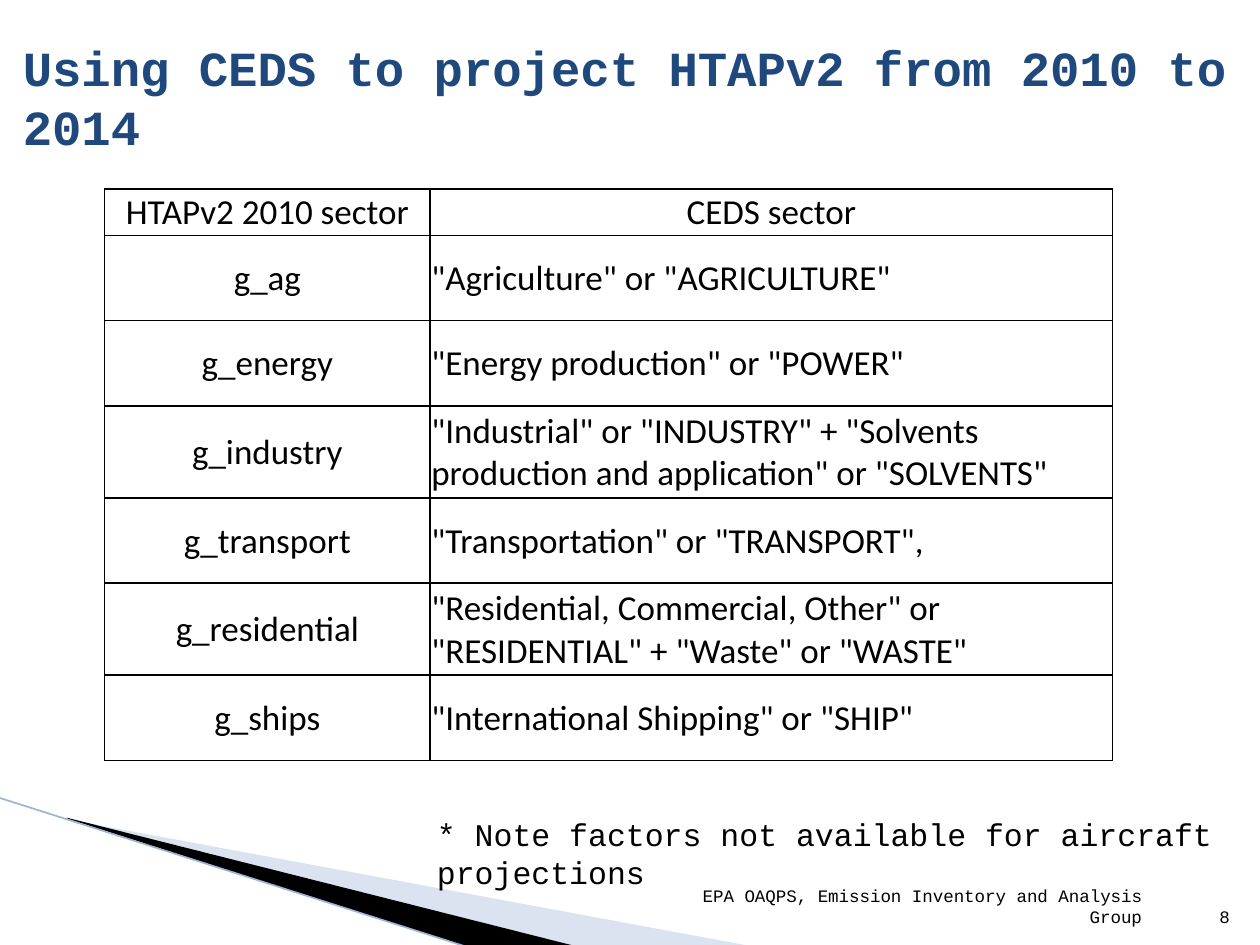
from lxml import etree
from pptx import Presentation
from pptx.dml.color import RGBColor
from pptx.enum import shapes, text
from pptx.oxml.ns import qn
from pptx.util import Pt

HUES = {"ink": "000000", "title": "1F497D", "pale": "A7B9DB", "edge": "9EB3D6"}
MONO, SANS = "Courier New", "Calibri"
LEFT, MID, RIGHT = text.PP_ALIGN.LEFT, text.PP_ALIGN.CENTER, text.PP_ALIGN.RIGHT
TOP, CENTER, BOTTOM = (text.MSO_ANCHOR.TOP, text.MSO_ANCHOR.MIDDLE,
                       text.MSO_ANCHOR.BOTTOM)

TITLE = "Using CEDS to project HTAPv2 from 2010 to 2014"
ROWS = [
    ("HTAPv2 2010 sector", "CEDS sector"),
    ("g_ag", '"Agriculture" or "AGRICULTURE"'),
    ("g_energy", '"Energy production" or "POWER"'),
    ("g_industry", '"Industrial" or "INDUSTRY" + "Solvents production and '
                   'application" or "SOLVENTS"'),
    ("g_transport", '"Transportation" or "TRANSPORT",'),
    ("g_residential", '"Residential, Commercial, Other" or "RESIDENTIAL" + '
                      '"Waste" or "WASTE"'),
    ("g_ships", '"International Shipping" or "SHIP"'),
]
WIDTHS = (186, 390)
HEAD, SHORT, TALL = 26.6, 48.7, 52.6
WRAP = 50  # longer sector text takes two lines

# words, box, size, alignment, anchor
NOTES = [
    ("EPA OAQPS, Emission Inventory and Analysis Group",
     (383.8, 504.7, 275.8, 28.8), 10, RIGHT, BOTTOM),
    ("8", (681, 504.7, 28.8, 28.8), 10, RIGHT, BOTTOM),
    ("* Note factors not available for aircraft projections",
     (242.6, 462.2, 459.4, 28.8), 18, LEFT, TOP),
]
# outline, colour, opacity in percent
WEDGES = [
    ([(39.6, 468.5), (428.4, 540.5), (328.3, 540.5), (39.6, 468)], "pale", 40),
    ([(38.2, 467.3), (329, 540.7), (267.8, 541.4), (38.9, 468)], "ink", 100),
]
EDGE = (-0.7, 455.8, 267.8, 541.4)


def rgb(name):
    return RGBColor.from_string(HUES[name])


def write(frame, words, size, face, align, hue="ink", bold=False):
    frame.word_wrap = True
    para = frame.paragraphs[0]
    para.text, para.alignment = words, align
    look = {"name": face, "size": Pt(size), "bold": bold}
    for key, value in look.items():
        setattr(para.font, key, value)
    para.font.color.rgb = rgb(hue)


def place(shape, box):
    for key, value in zip(("left", "top", "width", "height"), box):
        setattr(shape, key, Pt(value))


def border(cell):
    props = cell._tc.get_or_add_tcPr()
    for spot, side in enumerate(("lnL", "lnR", "lnT", "lnB")):
        line = etree.Element(qn("a:" + side), w=str(Pt(1)))
        fill = etree.SubElement(line, qn("a:solidFill"))
        etree.SubElement(fill, qn("a:srgbClr"), val=HUES["ink"])
        props.insert(spot, line)


def wedge(slide, dots, hue, alpha):
    dots = [(Pt(x), Pt(y)) for x, y in dots]
    pen = slide.shapes.build_freeform(*dots[0], scale=1.0)
    pen.add_line_segments(dots[1:], close=True)
    shape = pen.convert_to_shape()
    shape.shadow.inherit = False
    shape.line.fill.background()
    shape.fill.solid()
    shape.fill.fore_color.rgb = rgb(hue)
    if alpha < 100:
        tint = shape._element.spPr.find(".//" + qn("a:srgbClr"))
        etree.SubElement(tint, qn("a:alpha"), val=str(alpha * 1000))


def sectors(slide):
    highs = [HEAD] + [TALL if len(r[1]) > WRAP else SHORT for r in ROWS[1:]]
    box = [Pt(v) for v in (59.8, 108, sum(WIDTHS), sum(highs))]
    grid = slide.shapes.add_table(len(ROWS), len(WIDTHS), *box).table
    grid.first_row = grid.horz_banding = False
    for col, width in zip(grid.columns, WIDTHS):
        col.width = Pt(width)
    pads = {"margin_left": Pt(0.7), "margin_right": Pt(0.7),
            "margin_top": Pt(0.7), "margin_bottom": Pt(0),
            "vertical_anchor": CENTER}
    for i, row in enumerate(ROWS):
        grid.rows[i].height = Pt(highs[i])
        for j, words in enumerate(row):
            cell = grid.cell(i, j)
            for key, value in pads.items():
                setattr(cell, key, value)
            cell.fill.background()
            border(cell)
            write(cell.text_frame, words, 20, SANS, LEFT if i and j else MID)


def main():
    deck = Presentation()
    deck.slide_width, deck.slide_height = Pt(720), Pt(540)
    slide = deck.slides.add_slide(deck.slide_layouts[5])

    for dots, hue, alpha in WEDGES:
        wedge(slide, dots, hue, alpha)
    edge = slide.shapes.add_connector(shapes.MSO_CONNECTOR.STRAIGHT,
                                      *[Pt(v) for v in EDGE])
    edge.line.color.rgb, edge.line.width = rgb("edge"), Pt(0.95)
    etree.SubElement(edge._element.spPr, qn("a:effectLst"))

    title = slide.shapes.title
    place(title, (5.8, 10, 704, 90))
    title.text_frame.vertical_anchor = CENTER
    write(title.text_frame, TITLE, 28, MONO, LEFT, "title", True)

    sectors(slide)
    for words, box, size, align, anchor in NOTES:
        note = slide.shapes.add_textbox(*[Pt(v) for v in box])
        note.text_frame.vertical_anchor = anchor
        write(note.text_frame, words, size, MONO, align)

    deck.save("out.pptx")


if __name__ == "__main__":
    main()
